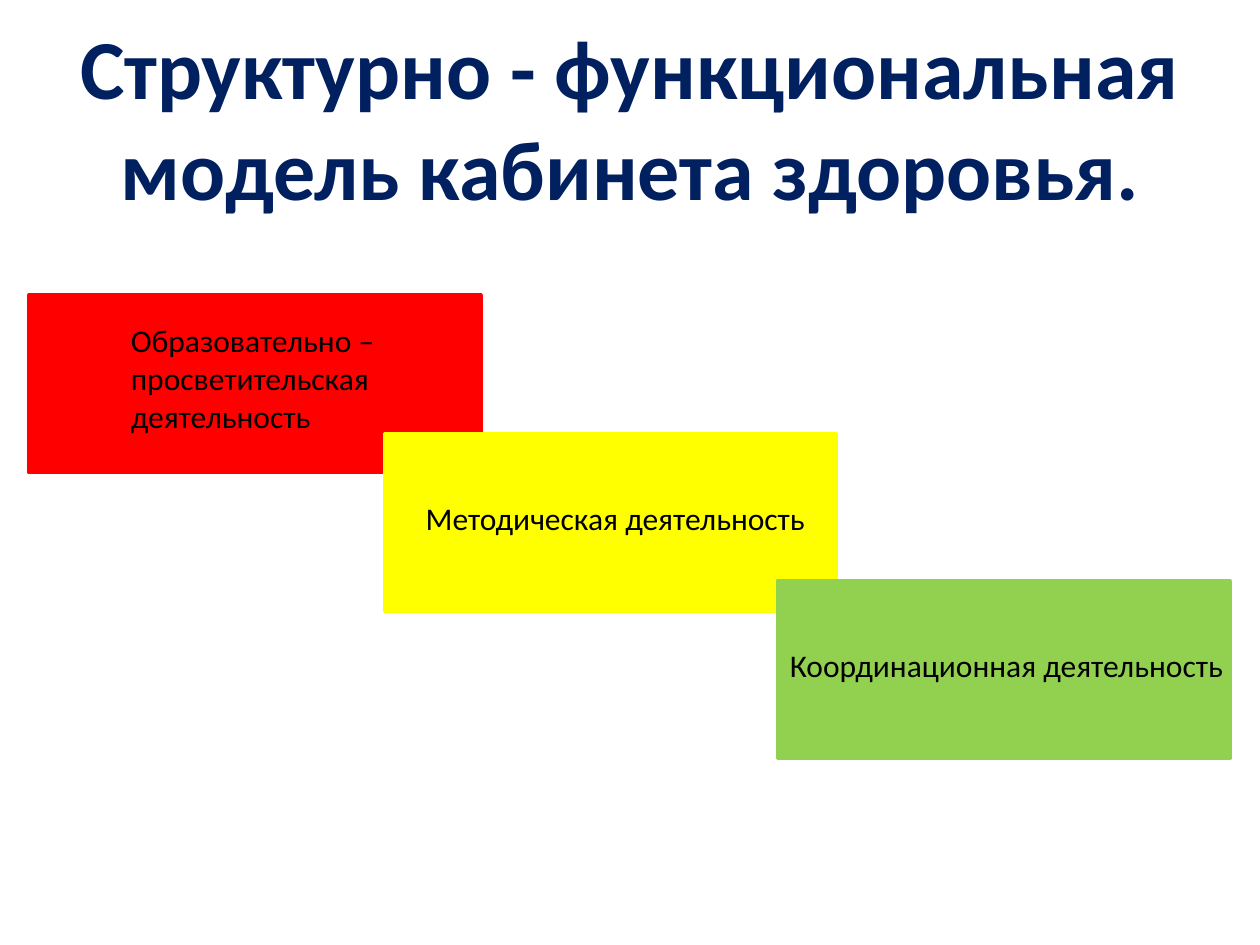
"""Build the slide with the structural and functional model of a health room."""
from pptx import Presentation
from pptx.dml.color import RGBColor
from pptx.enum.shapes import MSO_SHAPE as Shape
from pptx.enum.text import MSO_ANCHOR as Anchor, MSO_AUTO_SIZE as AutoSize, PP_ALIGN as Align
from pptx.util import Inches, Pt


def color(value):
    return RGBColor.from_string(value)


def write(holder, text, size, ink, align, bold=False):
    frame = holder.text_frame
    frame.text = text
    frame.word_wrap = True
    paragraph = frame.paragraphs[0]
    paragraph.alignment = align
    font = paragraph.runs[0].font
    font.name, font.size, font.bold = "Calibri", Pt(size), bold
    font.color.rgb = color(ink)
    return frame


prs = Presentation()
prs.slide_width, prs.slide_height = Inches(10), Inches(7.5)
slide = prs.slides.add_slide(prs.slide_layouts[5])

title = slide.shapes.title
title.left, title.top, title.width, title.height = map(Inches, (0.5, 0.3, 9, 1.25))
heading = write(title, "Структурно - функциональная модель кабинета здоровья.",
                48, "002060", Align.CENTER, bold=True)
heading.vertical_anchor = Anchor.MIDDLE
heading.auto_size = AutoSize.NONE

steps = [(0.23, 2.34, "FF0000"), (3.05, 3.44, "FFFF00"), (6.17, 4.61, "92D050")]
for left, top, fill in steps:
    step = slide.shapes.add_shape(Shape.RECTANGLE, Inches(left), Inches(top),
                                  Inches(3.59), Inches(1.41))
    step.shadow.inherit = False
    step.fill.solid()
    step.fill.fore_color.rgb = color(fill)
    step.line.color.rgb = color(fill)
    step.line.width = Pt(2)

activities = [
    ("Образовательно – просветительская деятельность", 0.94, 2.5, 2.58, 1.01),
    ("Методическая деятельность", 3.28, 3.91, 3.75, 0.4),
    ("Координационная деятельность", 6.17, 5.08, 3.83, 0.4),
]
for activity, *box in activities:
    label = slide.shapes.add_textbox(*map(Inches, box))
    write(label, activity, 18, "000000", Align.LEFT).auto_size = AutoSize.SHAPE_TO_FIT_TEXT

prs.save("out.pptx")
